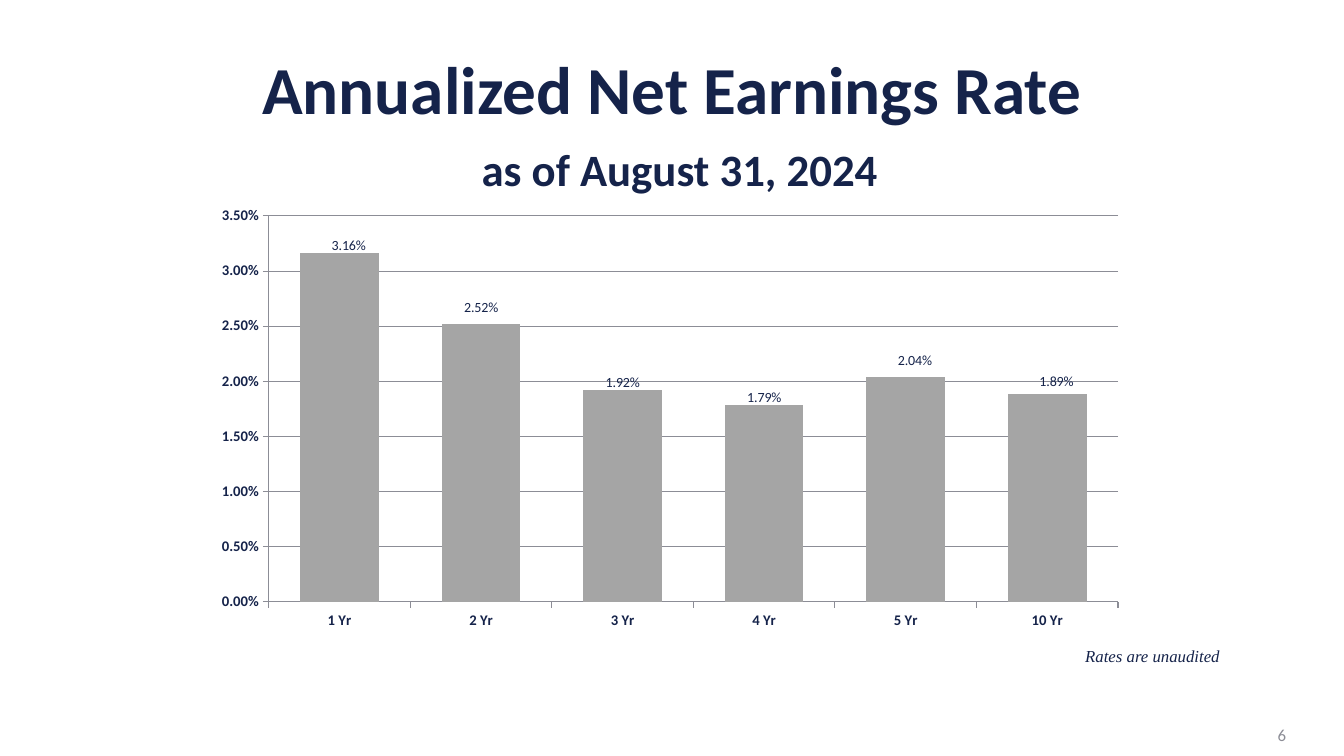
from lxml import etree
from pptx import Presentation
from pptx.chart.data import CategoryChartData
from pptx.dml.color import RGBColor
from pptx.enum import chart as ch, text
from pptx.oxml.ns import qn
from pptx.util import Cm, Pt

NAVY = RGBColor(0x15, 0x23, 0x4A)
BAR_GRAY = RGBColor(0xA5, 0xA5, 0xA5)
LINE_GRAY = RGBColor(0x8C, 0x8D, 0x96)

# Period, net rate, label shift right and down as shares of the chart size
RATES = [
    ("1 Yr", 0.0316, 0.01, 0.01),
    ("2 Yr", 0.0252, 0, -0.01),
    ("3 Yr", 0.0192, 0, 0.01),
    ("4 Yr", 0.0179, 0, 0.01),
    ("5 Yr", 0.0204, 0.01, -0.01),
    ("10 Yr", 0.0189, 0.01, 0),
]


def set_font(font, size, color=NAVY, name="Calibri", bold=False, italic=False):
    font.name, font.size = name, Pt(size)
    font.bold, font.italic = bold, italic
    font.color.rgb = color


def add_run(paragraph, words, **style):
    run = paragraph.add_run()
    run.text = words
    set_font(run.font, **style)


def add_text(slide, words, left, top, width, height, align=text.PP_ALIGN.LEFT,
             anchor=text.MSO_ANCHOR.TOP, **style):
    frame = slide.shapes.add_textbox(Cm(left), Cm(top), Cm(width), Cm(height)).text_frame
    frame.word_wrap = True
    frame.vertical_anchor = anchor
    frame.paragraphs[0].alignment = align
    add_run(frame.paragraphs[0], words, **style)


def fill_title(title):
    title.left, title.top, title.width, title.height = Cm(1.7), Cm(2.11), Cm(30.48), Cm(2.26)
    frame = title.text_frame
    frame.word_wrap = True
    frame.auto_size = text.MSO_AUTO_SIZE.NONE
    frame.vertical_anchor = text.MSO_ANCHOR.MIDDLE
    heading = frame.paragraphs[0]
    heading.alignment = text.PP_ALIGN.CENTER
    heading.line_spacing = 0.9
    add_run(heading, "Annualized Net Earnings Rate", size=48, bold=True)
    heading.add_line_break()
    add_run(heading, " ", size=48, bold=True)
    add_run(heading, "as of August 31, 2024", size=32, bold=True)


def manual_layout(**settings):
    layout = etree.Element(qn("c:layout"))
    manual = etree.SubElement(layout, qn("c:manualLayout"))
    for tag, value in settings.items():
        etree.SubElement(manual, qn(f"c:{tag}")).set("val", str(value))
    return layout


def format_axis(axis):
    axis.major_tick_mark = ch.XL_TICK_MARK.OUTSIDE
    axis.minor_tick_mark = ch.XL_TICK_MARK.NONE
    set_font(axis.tick_labels.font, 10.5, bold=True)
    axis.format.line.color.rgb = LINE_GRAY
    axis.format.line.width = Pt(0.75)


def label_bars(series):
    for index, (_, _, right, down) in enumerate(RATES):
        label = series.points[index].data_label
        set_font(label.font, 10)
        label.position = ch.XL_LABEL_POSITION.OUTSIDE_END
        entry = series.data_labels._element.findall(qn("c:dLbl"))[index]
        entry.insert(1, manual_layout(x=right, y=down))
    labels = series.data_labels
    labels.show_value = True
    labels.number_format, labels.number_format_is_linked = "0.00%", False
    labels.position = ch.XL_LABEL_POSITION.OUTSIDE_END
    set_font(labels.font, 10)


def add_rate_chart(slide):
    rates = CategoryChartData(number_format="0.00%")
    rates.categories = [row[0] for row in RATES]
    rates.add_series("Series 1", [row[1] for row in RATES])
    chart = slide.shapes.add_chart(ch.XL_CHART_TYPE.COLUMN_CLUSTERED, Cm(5.28), Cm(5.08),
                                   Cm(22.99), Cm(11.68), rates).chart
    chart.has_legend = chart.has_title = False
    set_font(chart.font, 18)

    plot = chart.plots[0]
    plot.gap_width = 80
    plot.vary_by_categories = False
    bars = plot.series[0]
    bars.format.fill.solid()
    bars.format.fill.fore_color.rgb = BAR_GRAY
    label_bars(bars)

    format_axis(chart.category_axis)
    percent = chart.value_axis
    format_axis(percent)
    percent.minimum_scale, percent.maximum_scale, percent.major_unit = 0, 0.035, 0.005
    percent.tick_labels.number_format = "0.00%"
    percent.tick_labels.number_format_is_linked = False
    percent.has_major_gridlines = True
    percent.major_gridlines.format.line.color.rgb = LINE_GRAY
    percent.major_gridlines.format.line.width = Pt(0.75)

    plot_area = chart._chartSpace.chart.plotArea
    for old in plot_area.findall(qn("c:layout")):
        plot_area.remove(old)
    plot_area.insert(0, manual_layout(layoutTarget="inner", xMode="edge", yMode="edge",
                                      x=0.065, y=0.031, w=0.931, h=0.833))


def main():
    deck = Presentation()
    deck.slide_width, deck.slide_height = Cm(33.87), Cm(19.05)
    slide = deck.slides.add_slide(deck.slide_layouts[5])
    fill_title(slide.shapes.title)
    add_rate_chart(slide)
    add_text(slide, "6", 25.04, 18.01, 7.62, 1.02, align=text.PP_ALIGN.RIGHT,
             anchor=text.MSO_ANCHOR.MIDDLE, size=12, color=LINE_GRAY)
    add_text(slide, "Rates are unaudited", 27.1, 16.15, 5.92, 0.76,
             size=12, name="Times New Roman", italic=True)
    deck.save("out.pptx")


if __name__ == "__main__":
    main()
